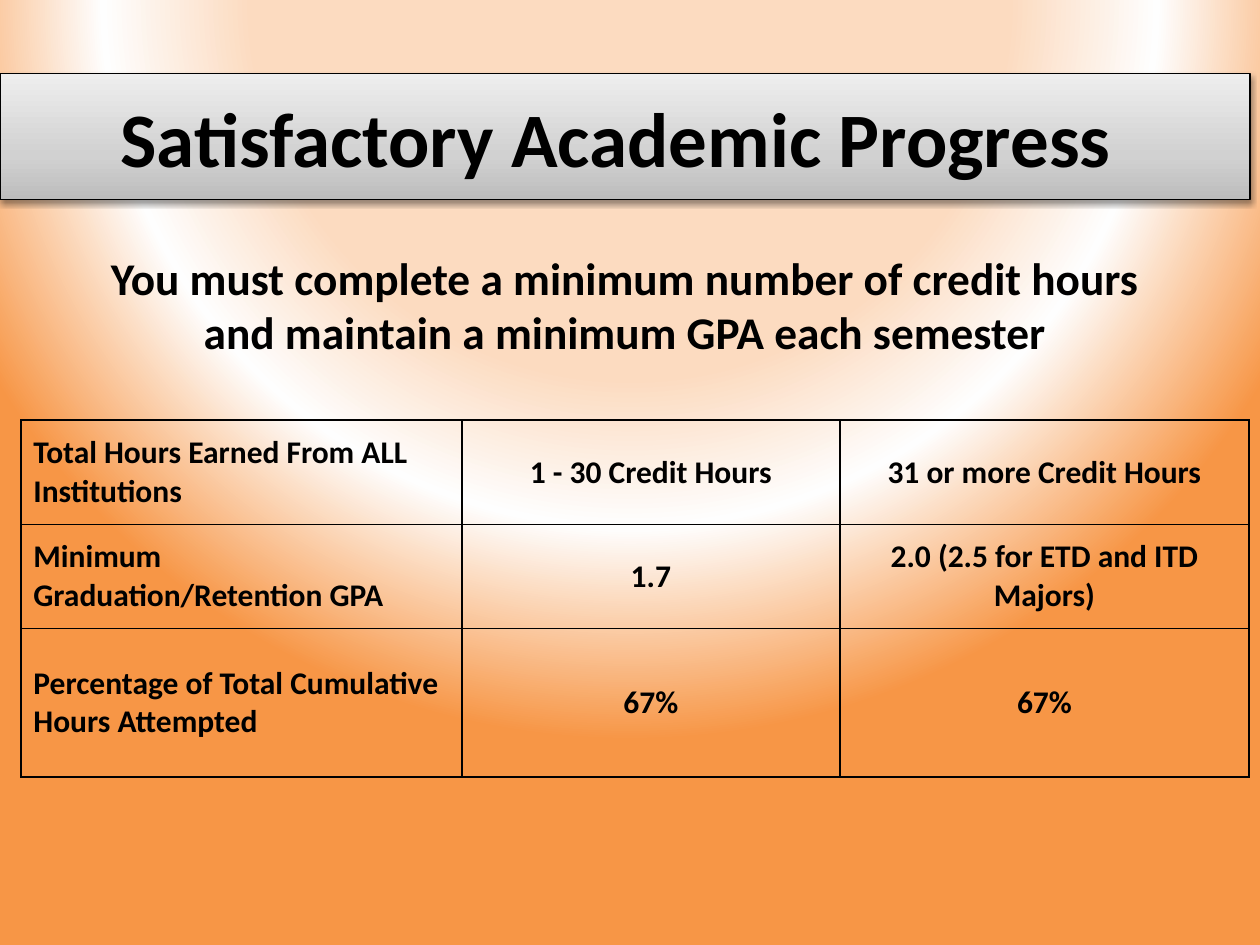
"""Build a slide on satisfactory academic progress with a table of minimum requirements."""
from lxml import etree
from pptx import Presentation
from pptx import util as u
from pptx.dml.color import RGBColor
from pptx.enum import text
from pptx.oxml import parse_xml

NS = ('xmlns:a="http://schemas.openxmlformats.org/drawingml/2006/main" '
      'xmlns:p="http://schemas.openxmlformats.org/presentationml/2006/main"')
MID = text.MSO_ANCHOR.MIDDLE


def grad(stops, way):
    gs = "".join(f'<a:gs pos="{pos * 1000}"><a:srgbClr val="{hue}"/></a:gs>'
                 for pos, hue in stops)
    return f'<a:gradFill {NS} rotWithShape="1"><a:gsLst>{gs}</a:gsLst>{way}</a:gradFill>'


def write(frame, words, size, center=True):
    frame.word_wrap = True
    frame.vertical_anchor = MID
    para = frame.paragraphs[0]
    para.alignment = text.PP_ALIGN.CENTER if center else text.PP_ALIGN.LEFT
    run = para.add_run()
    run.text = words
    run.font.name = "Calibri"
    run.font.size = u.Pt(size)
    run.font.bold = True
    run.font.color.rgb = RGBColor.from_string("000000")
    return para


deck = Presentation()
deck.slide_width, deck.slide_height = u.Cm(25.4), u.Cm(19.05)
slide = deck.slides.add_slide(deck.slide_layouts[5])

glow = grad([(48, "FCDBC0"), (67, "FEFEFE"), (94, "F79646")],
            '<a:path path="circle"><a:fillToRect l="50000" t="-80000" '
            'r="50000" b="180000"/></a:path>')
back = parse_xml(f"<p:bg {NS}><p:bgPr>{glow}<a:effectLst/></p:bgPr></p:bg>")
slide.element.cSld.insert(0, back)

title = slide.shapes.title
title.left, title.top = u.Cm(0), u.Cm(1.48)
title.width, title.height = u.Cm(25.2), u.Cm(2.54)
props = title.element.spPr
props.append(parse_xml(grad([(0, "BDBDBD"), (35, "D1D1D1"), (100, "EEEEEE")],
                            '<a:lin ang="16200000" scaled="1"/>')))
title.line.color.rgb = RGBColor.from_string("000000")
title.line.width = u.Pt(0.75)
props.append(parse_xml(
    f'<a:effectLst {NS}><a:outerShdw blurRad="{u.Pt(3.1)}" dist="{u.Pt(1.6)}" '
    'dir="5400000" rotWithShape="0"><a:srgbClr val="000000">'
    '<a:alpha val="38000"/></a:srgbClr></a:outerShdw></a:effectLst>'))
write(title.text_frame, "Satisfactory Academic Progress ", 44)

intro = slide.shapes.add_textbox(u.Cm(1.7), u.Cm(3.81), u.Cm(21.8), u.Cm(4.65))
para = write(intro.text_frame, "You must complete a minimum number of credit hours "
             "and maintain a minimum GPA each semester", 25.9)
para.space_before = u.Pt(5.2)

rows = [
    ("Total Hours Earned From ALL Institutions",
     "1 - 30 Credit Hours", "31 or more Credit Hours"),
    ("Minimum Graduation/Retention GPA", "1.7", "2.0 (2.5 for ETD and ITD Majors)"),
    ("Percentage of Total Cumulative Hours Attempted", "67%", "67%"),
]
wide, high = (8.89, 7.62, 8.25), (2.1, 2.1, 2.99)
table = slide.shapes.add_table(3, 3, u.Cm(0.42), u.Cm(8.47),
                               u.Cm(sum(wide)), u.Cm(sum(high))).table
table.first_row = table.horz_banding = False
for col, size in zip(table.columns, wide):
    col.width = u.Cm(size)
for row, size, line in zip(table.rows, high, rows):
    row.height = u.Cm(size)
    for num, (cell, words) in enumerate(zip(row.cells, line)):
        write(cell.text_frame, words, 18, num > 0)
        cell.vertical_anchor = MID
        edges = cell._tc.get_or_add_tcPr()
        for side in "LRTB":
            edges.append(etree.fromstring(
                f'<a:ln{side} {NS} w="{u.Pt(1)}"><a:solidFill>'
                f'<a:srgbClr val="000000"/></a:solidFill></a:ln{side}>'))
        cell.fill.background()

deck.save("out.pptx")
